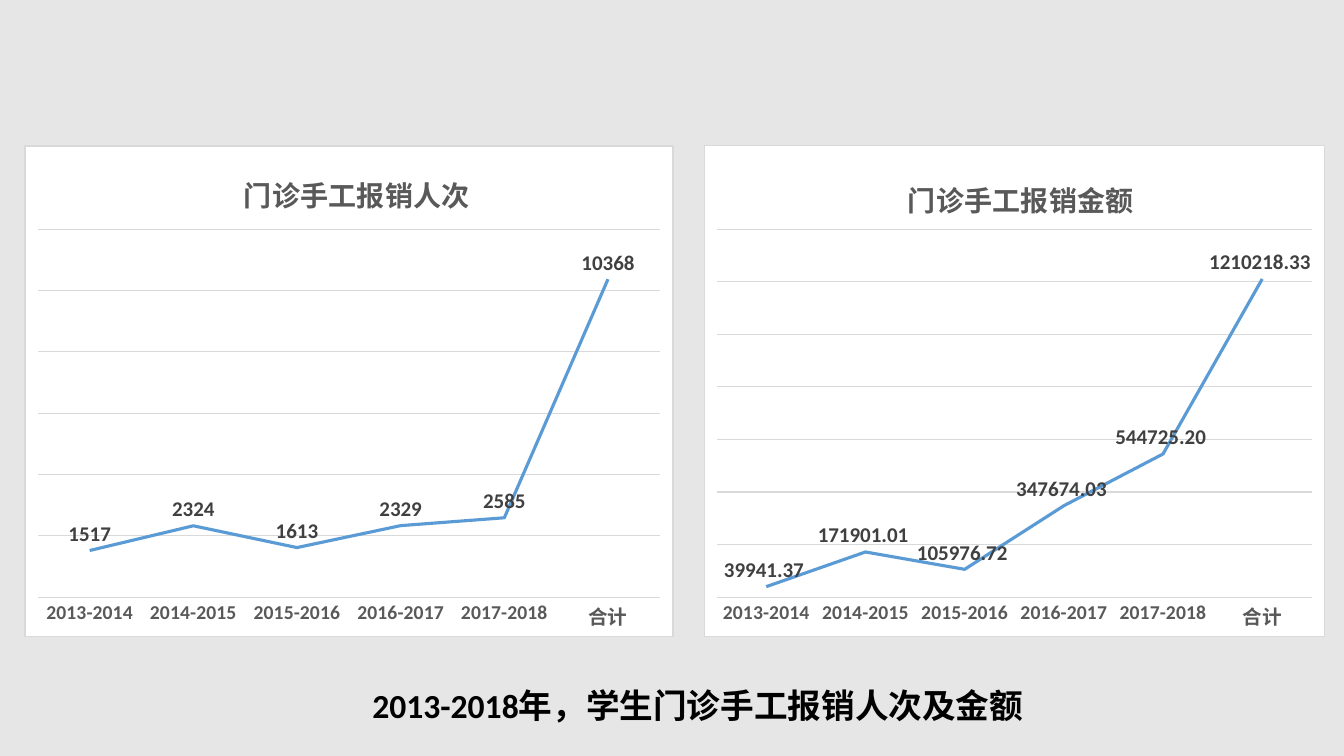
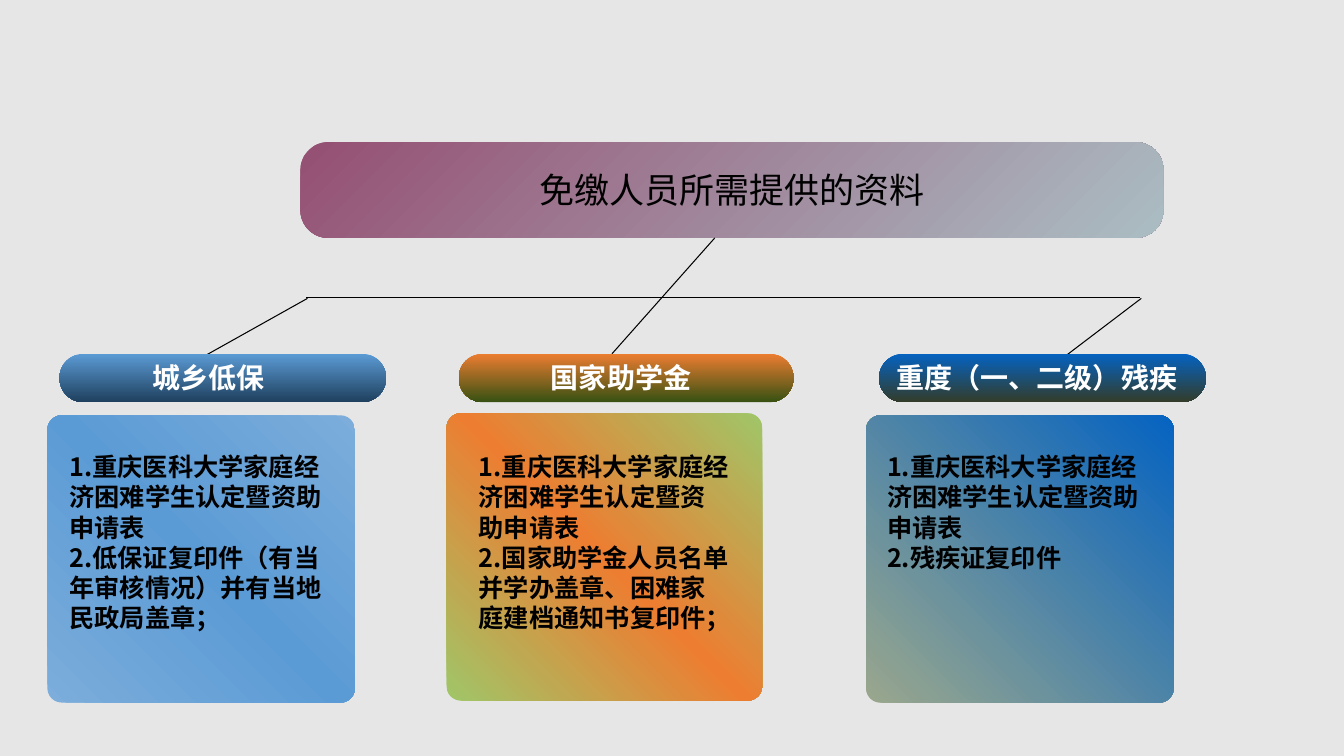
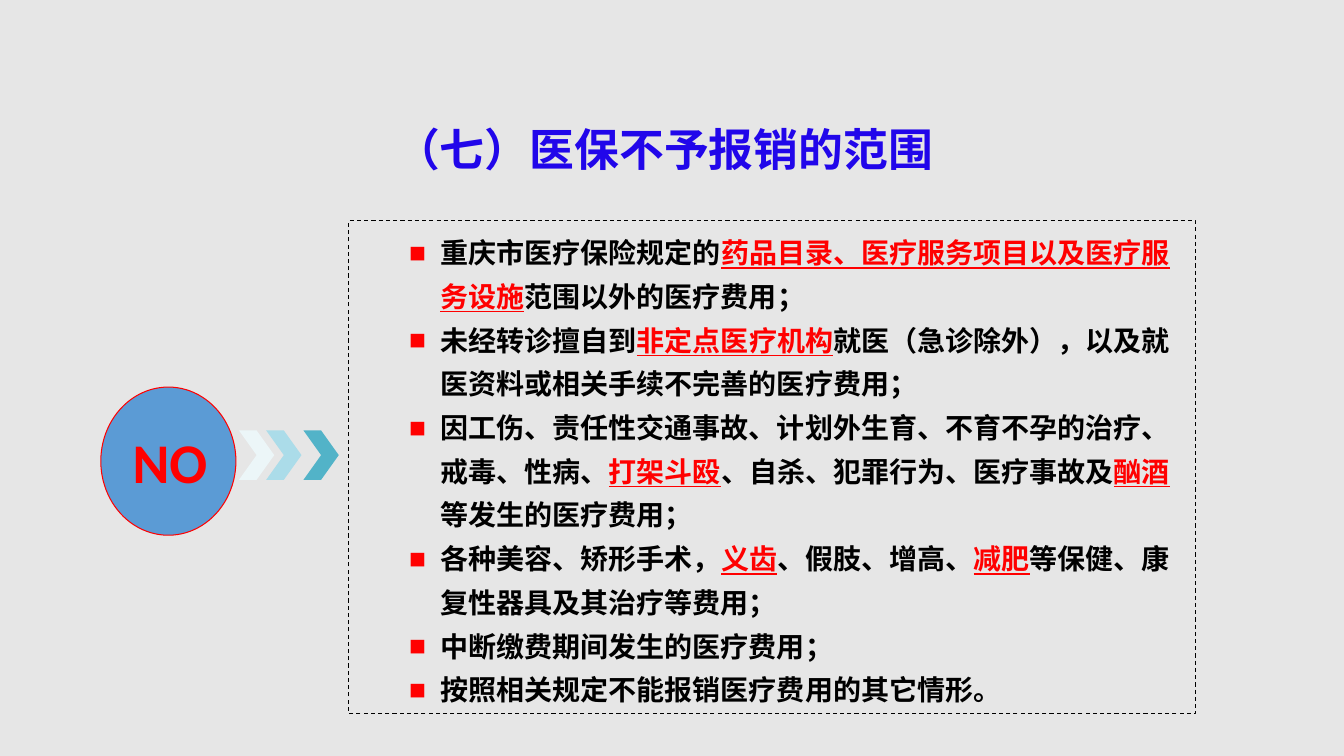
"""Build three slides about student medical insurance reimbursement."""

from dataclasses import dataclass
from typing import NamedTuple

import lxml.etree
import pptx
import pptx.chart.data
import pptx.dml.color
import pptx.enum.chart
import pptx.enum.dml
import pptx.enum.shapes
import pptx.enum.text
import pptx.oxml
import pptx.oxml.ns
import pptx.util

EMU_PER_PX = 9144
CJK = "Noto Sans CJK SC"
CALIBRI = "Calibri"
ARIAL = "Arial"
COLORS = {
    "background": "E6E6E6",
    "black": "000000",
    "white": "FFFFFF",
    "red": "FF0000",
    "title": "2106EA",
    "blue": "5B9BD5",
    "light_blue": "7CADDB",
    "dark_blue": "1F405E",
    "orange": "ED7D31",
    "green": "A0C668",
    "dark_green": "375112",
    "royal": "0563C1",
    "olive": "9AA78D",
    "dark_olive": "333C2A",
    "plum": "954F72",
    "mist": "ABBDC3",
    "grid": "D9D9D9",
    "axis_text": "595959",
    "label_text": "404040",
    "chevron_pale": "ECF6F8",
    "chevron_light": "ABDCE9",
    "chevron_deep": "52B3C8",
}
SHAPES = pptx.enum.shapes.MSO_SHAPE
CENTER = pptx.enum.text.PP_ALIGN.CENTER
LEFT = pptx.enum.text.PP_ALIGN.LEFT
GROW = pptx.enum.text.MSO_AUTO_SIZE.SHAPE_TO_FIT_TEXT
YEARS = ["2013-2014", "2014-2015", "2015-2016", "2016-2017", "2017-2018", "合计"]
APPLICATION_FORM = "1.重庆医科大学家庭经济困难学生认定暨资助申请表"


class Box(NamedTuple):
    left: int
    top: int
    width: int
    height: int

    def emu(self) -> list[int]:
        return [px(length) for length in self]


class Style(NamedTuple):
    size: int
    color: str = "black"
    name: str = CJK
    bold: bool = True


class Gradient(NamedTuple):
    colors: tuple[str, ...]
    angle: int


@dataclass
class LinePanel:
    title: str
    box: Box
    values: list[float]
    number_format: str
    border: float
    title_x: float
    title_y: float


@dataclass
class Card:
    heading: str
    items: list[str]
    body: Box
    pill: Box
    heading_box: Box
    items_box: Box
    body_colors: tuple[str, ...]
    pill_colors: tuple[str, str]


class Chevron(NamedTuple):
    left: int
    color: str


PANELS = [
    LinePanel("门诊手工报销人次", Box(24, 144, 644, 488),
              [1517, 2324, 1613, 2329, 2585, 10368], "General", 1, 0.33, 0.04),
    LinePanel("门诊手工报销金额", Box(698, 144, 616, 488),
              [39941.37, 171901.01, 105976.72, 347674.03, 544725.2, 1210218.33],
              "0.00_ ", 0.75, 0.32, 0.05),
]
CARDS = [
    Card("城乡低保",
         [APPLICATION_FORM, "2.低保证复印件（有当年审核情况）并有当地民政局盖章；"],
         Box(47, 412, 305, 285), Box(59, 351, 324, 48),
         Box(71, 353, 272, 44), Box(59, 443, 284, 192),
         ("light_blue", "blue", "light_blue"), ("blue", "dark_blue")),
    Card("国家助学金",
         [APPLICATION_FORM, "2.国家助学金人员名单并学办盖章、困难家庭建档通知书复印件；"],
         Box(443, 410, 313, 285), Box(455, 351, 332, 48),
         Box(480, 353, 272, 44), Box(465, 443, 268, 222),
         ("green", "orange", "green"), ("orange", "dark_green")),
    Card("重度（一、二级）残疾",
         [APPLICATION_FORM, "2.残疾证复印件"],
         Box(859, 412, 305, 285), Box(872, 351, 324, 48),
         Box(872, 353, 313, 44), Box(870, 443, 284, 131),
         ("olive", "royal"), ("royal", "dark_olive")),
]
BRANCHES = [(304, 295, 1131, 295), (205, 352, 305, 296),
            (709, 236, 607, 351), (1057, 353, 1132, 296)]
EXCLUSIONS = [
    [("重庆市医疗保险规定的", False), ("药品目录、医疗服务项目以及医疗服务设施", True),
     ("范围以外的医疗费用；", False)],
    [("未经转诊擅自到", False), ("非定点医疗机构", True),
     ("就医（急诊除外），以及就医资料或相关手续不完善的医疗费用；", False)],
    [("因工伤、责任性交通事故、计划外生育、不育不孕的治疗、戒毒、性病、", False),
     ("打架斗殴", True), ("、自杀、犯罪行为、医疗事故及", False), ("酗酒", True),
     ("等发生的医疗费用；", False)],
    [("各种美容、矫形手术，", False), ("义齿", True), ("、假肢、增高、", False),
     ("减肥", True), ("等保健、康复性器具及其治疗等费用；", False)],
    [("中断缴费期间发生的医疗费用；", False)],
    [("按照相关规定不能报销医疗费用的其它情形。", False)],
]
CHEVRONS = [Chevron(237, "chevron_pale"), Chevron(264, "chevron_light"),
            Chevron(301, "chevron_deep")]


def px(length: int) -> int:
    return length * EMU_PER_PX


def rgb(color: str) -> pptx.dml.color.RGBColor:
    return pptx.dml.color.RGBColor.from_string(COLORS[color])


def add_child(parent, tag: str, **attributes: str):
    child = lxml.etree.SubElement(parent, pptx.oxml.ns.qn(tag))
    for name, value in attributes.items():
        child.set(name, value)
    return child


def apply_font(font, style: Style) -> None:
    font.size = pptx.util.Pt(style.size)
    font.bold = style.bold
    font.name = style.name
    font.color.rgb = rgb(style.color)


def add_run(paragraph, text: str, style: Style, underline: bool = False) -> None:
    run = paragraph.add_run()
    run.text = text
    apply_font(run.font, style)
    if underline:
        run.font.underline = True
    latin = run.font._element.find(pptx.oxml.ns.qn("a:latin"))
    east_asian = add_child(run.font._element, "a:ea", typeface=CJK)
    latin.addnext(east_asian)


def next_paragraph(frame, index: int):
    return frame.paragraphs[0] if index == 0 else frame.add_paragraph()


def add_text(slide, box: Box, lines: list[str], style: Style, align=CENTER) -> None:
    frame = slide.shapes.add_textbox(*box.emu()).text_frame
    frame.word_wrap = True
    frame.auto_size = GROW
    for index, line in enumerate(lines):
        paragraph = next_paragraph(frame, index)
        paragraph.alignment = align
        add_run(paragraph, line, style)


def add_figure(slide, kind, box: Box, fill: str | Gradient | None = None,
               line: str | None = None, adjustment: float | None = None):
    shape = slide.shapes.add_shape(kind, *box.emu())
    shape.shadow.inherit = False
    if adjustment is not None:
        shape.adjustments[0] = adjustment
    if isinstance(fill, Gradient):
        shape.fill.gradient()
        shape.fill.gradient_angle = fill.angle
        stops = next(shape._element.spPr.iter(pptx.oxml.ns.qn("a:gsLst")))
        for stop in list(stops):
            stops.remove(stop)
        for index, color in enumerate(fill.colors):
            position = index * 100000 // (len(fill.colors) - 1)
            stop = add_child(stops, "a:gs", pos=str(position))
            add_child(stop, "a:srgbClr", val=COLORS[color])
    elif fill:
        shape.fill.solid()
        shape.fill.fore_color.rgb = rgb(fill)
    else:
        shape.fill.background()
    if line:
        shape.line.color.rgb = rgb(line)
        shape.line.width = pptx.util.Pt(0.75)
    else:
        shape.line.fill.background()
    return shape


def add_branch(slide, ends: tuple[int, int, int, int]) -> None:
    connector = slide.shapes.add_connector(
        pptx.enum.shapes.MSO_CONNECTOR.STRAIGHT, *[px(end) for end in ends])
    connector.line.color.rgb = rgb("black")
    connector.line.width = pptx.util.Pt(0.75)
    add_child(connector._element.spPr, "a:effectLst")


def place_manually(parent, index: int, inner: bool = False, **fractions: float) -> None:
    for layout in parent.findall(pptx.oxml.ns.qn("c:layout")):
        parent.remove(layout)
    layout = add_child(parent, "c:layout")
    parent.insert(index, layout)
    manual = add_child(layout, "c:manualLayout")
    if inner:
        add_child(manual, "c:layoutTarget", val="inner")
    for axis in ("x", "y"):
        add_child(manual, f"c:{axis}Mode", val="edge")
    for name, value in fractions.items():
        add_child(manual, f"c:{name}", val=str(value))


def frame_chart(chart, border: float) -> None:
    properties = pptx.oxml.parse_xml(
        f'<c:spPr {pptx.oxml.ns.nsdecls("c", "a")}>'
        f'<a:solidFill><a:srgbClr val="{COLORS["white"]}"/></a:solidFill>'
        f'<a:ln w="{int(pptx.util.Pt(border))}"><a:solidFill>'
        f'<a:srgbClr val="{COLORS["grid"]}"/></a:solidFill></a:ln></c:spPr>')
    chart._chartSpace.find(pptx.oxml.ns.qn("c:chart")).addnext(properties)


def add_line_panel(slide, panel: LinePanel) -> None:
    data = pptx.chart.data.CategoryChartData(number_format=panel.number_format)
    data.categories = YEARS
    data.add_series(panel.title, panel.values)
    chart = slide.shapes.add_chart(
        pptx.enum.chart.XL_CHART_TYPE.LINE, *panel.box.emu(), data).chart
    apply_font(chart.font, Style(10, name=CALIBRI, bold=False))
    frame_chart(chart, panel.border)
    chart.has_legend = False
    chart.has_title = True
    add_run(chart.chart_title.text_frame.paragraphs[0], panel.title,
            Style(20, "axis_text"))
    place_manually(chart.chart_title._element, 1, x=panel.title_x, y=panel.title_y)
    place_manually(chart._chartSpace.chart.plotArea, 0, inner=True,
                   x=0.02, y=0.17, w=0.96, h=0.75)

    no_ticks = pptx.enum.chart.XL_TICK_MARK.NONE
    chart.category_axis.major_tick_mark = no_ticks
    chart.category_axis.minor_tick_mark = no_ticks
    apply_font(chart.category_axis.tick_labels.font,
               Style(14, "axis_text", CALIBRI))
    chart.value_axis.visible = False
    chart.value_axis.minimum_scale = 0
    chart.value_axis.has_major_gridlines = True
    for line in (chart.category_axis.format.line,
                 chart.value_axis.major_gridlines.format.line):
        line.color.rgb = rgb("grid")
        line.width = pptx.util.Pt(0.75)

    plot = chart.plots[0]
    plot.vary_by_categories = False
    plot.has_data_labels = True
    labels = plot.data_labels
    labels.show_value = True
    labels.position = pptx.enum.chart.XL_LABEL_POSITION.ABOVE
    labels.number_format = panel.number_format
    labels.number_format_is_linked = False
    apply_font(labels.font, Style(15, "label_text", CALIBRI))
    series = plot.series[0]
    series.smooth = False
    series.format.line.color.rgb = rgb("blue")
    series.format.line.width = pptx.util.Pt(2.25)


def add_card(slide, card: Card) -> None:
    add_figure(slide, SHAPES.ROUNDED_RECTANGLE, card.body,
               Gradient(card.body_colors, 45), adjustment=0.05)
    add_figure(slide, SHAPES.ROUNDED_RECTANGLE, card.pill,
               Gradient(card.pill_colors, 270), adjustment=0.5)
    add_text(slide, card.heading_box, [card.heading], Style(20, "white", ARIAL))
    add_text(slide, card.items_box, card.items, Style(18), LEFT)


def add_bullet(paragraph) -> None:
    properties = paragraph._p.get_or_add_pPr()
    properties.set("marL", str(px(81)))
    properties.set("indent", str(px(-31)))
    bullet_color = add_child(properties, "a:buClr")
    add_child(bullet_color, "a:srgbClr", val=COLORS["red"])
    add_child(properties, "a:buFont", typeface=ARIAL)
    add_child(properties, "a:buChar", char="■")


def build_trend_slide(slide) -> None:
    add_text(slide, Box(338, 675, 708, 50),
             ["2013-2018年，学生门诊手工报销人次及金额"], Style(24, name=CALIBRI))
    for panel in PANELS:
        add_line_panel(slide, panel)


def build_documents_slide(slide) -> None:
    banner = add_figure(slide, SHAPES.ROUNDED_RECTANGLE, Box(298, 141, 856, 95),
                        Gradient(("plum", "mist"), 315), adjustment=0.29)
    frame = banner.text_frame
    frame.word_wrap = False
    frame.vertical_anchor = pptx.enum.text.MSO_ANCHOR.MIDDLE
    frame.paragraphs[0].alignment = CENTER
    add_run(frame.paragraphs[0], "免缴人员所需提供的资料", Style(25, bold=False))
    for ends in BRANCHES:
        add_branch(slide, ends)
    for card in CARDS:
        add_card(slide, card)


def build_exclusions_slide(slide) -> None:
    panel = add_figure(slide, SHAPES.RECTANGLE, Box(346, 219, 840, 489), line="black")
    panel.line.dash_style = pptx.enum.dml.MSO_LINE.DASH
    frame = panel.text_frame
    frame.word_wrap = True
    frame.auto_size = GROW
    frame.vertical_anchor = pptx.enum.text.MSO_ANCHOR.TOP
    for index, parts in enumerate(EXCLUSIONS):
        paragraph = next_paragraph(frame, index)
        add_bullet(paragraph)
        paragraph.level = 1
        paragraph.alignment = LEFT
        paragraph.line_spacing = 1.3
        for text, stressed in parts:
            add_run(paragraph, text, Style(20, "red" if stressed else "black"), stressed)
    add_figure(slide, SHAPES.OVAL, Box(100, 384, 134, 147), "blue", "red")
    add_text(slide, Box(100, 419, 137, 77), ["NO"], Style(40, "red", CALIBRI))
    for chevron in CHEVRONS:
        add_figure(slide, SHAPES.CHEVRON, Box(chevron.left, 427, 35, 49),
                   chevron.color, adjustment=0.5)
    add_text(slide, Box(346, 116, 626, 63), ["（七）医保不予报销的范围"],
             Style(32, "title"))


def main() -> None:
    presentation = pptx.Presentation()
    presentation.slide_width = px(1333)
    presentation.slide_height = px(750)
    background = presentation.slide_master.background.fill
    background.solid()
    background.fore_color.rgb = rgb("background")
    for build in (build_trend_slide, build_documents_slide, build_exclusions_slide):
        build(presentation.slides.add_slide(presentation.slide_layouts[6]))
    presentation.save("out.pptx")


if __name__ == "__main__":
    main()
